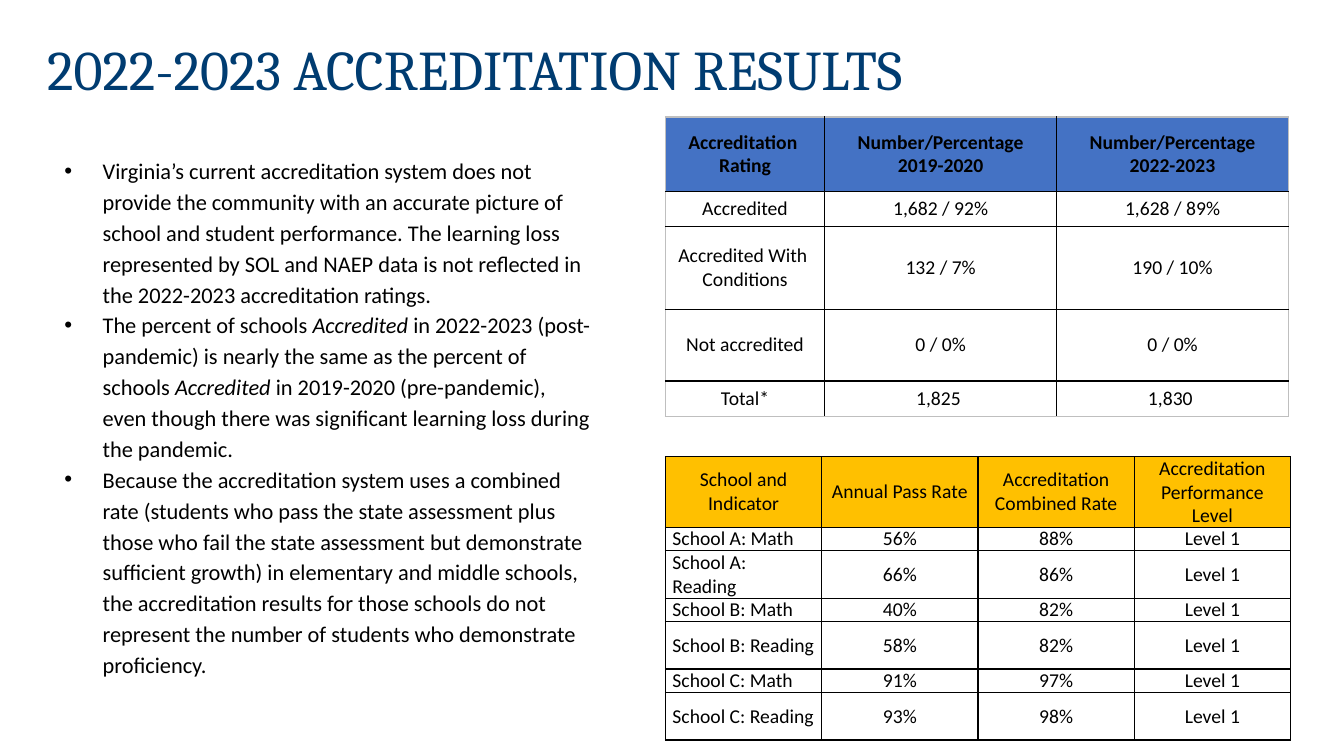
import pptx
import pptx.util
import pptx.dml.color
import pptx.enum.text
import pptx.oxml.ns
from lxml import etree

Inches, Pt = pptx.util.Inches, pptx.util.Pt
ALIGN = pptx.enum.text.PP_ALIGN
ANCHOR = pptx.enum.text.MSO_ANCHOR

HUES = {"navy": "003C71", "black": "000000", "blue": "4472C4",
        "gold": "FFC000", "grey": "BFBFBF"}

POINTS = [
    ["Virginia’s current accreditation system does not provide the community "
     "with an accurate picture of school and student performance. The learning "
     "loss represented by SOL and NAEP data is not reflected in the 2022-2023 "
     "accreditation ratings."],
    ["The percent of schools ", "Accredited",
     " in 2022-2023 (post-pandemic) is nearly the same as the percent of schools ",
     "Accredited",
     " in 2019-2020 (pre-pandemic), even though there was significant learning "
     "loss during the pandemic."],
    ["Because the accreditation system uses a combined rate (students who pass "
     "the state assessment plus those who fail the state assessment but "
     "demonstrate sufficient growth) in elementary and middle schools, the "
     "accreditation results for those schools do not represent the number of "
     "students who demonstrate proficiency."],
]

RATINGS = [
    ["Accreditation \nRating", "Number/Percentage\v2019-2020",
     " Number/Percentage \v2022-2023"],
    ["Accredited", "1,682 / 92%", "1,628 / 89%"],
    ["Accredited With \nConditions", "132 / 7%", "190 / 10%"],
    ["Not accredited", "0 / 0%", "0 / 0%"],
    ["Total*", "1,825 ", "1,830 "],
]

SCHOOLS = [
    ["School and Indicator", "Annual Pass Rate", "Accreditation Combined Rate",
     "Accreditation Performance Level"],
    ["School A: Math", "56%", "88%", "Level 1"],
    ["School A: Reading", "66%", "86%", "Level 1"],
    ["School B: Math", "40%", "82%", "Level 1"],
    ["School B: Reading", "58%", "82%", "Level 1"],
    ["School C: Math", "91%", "97%", "Level 1"],
    ["School C: Reading", "93%", "98%", "Level 1"],
]


def color(name):
    return pptx.dml.color.RGBColor.from_string(HUES[name])


def add_sub(node, tag, **attrs):
    return etree.SubElement(node, pptx.oxml.ns.qn(tag), attrs)


def style(font, hue="black", **looks):
    font.color.rgb = color(hue)
    for key, value in looks.items():
        setattr(font, key, value)


def add_box(slide, left, top, width, height, **looks):
    box = slide.shapes.add_textbox(*map(Inches, (left, top, width, height)))
    frame = box.text_frame
    for key, value in {"word_wrap": True, **looks}.items():
        setattr(frame, key, value)
    return frame


def add_title(slide, text):
    frame = add_box(slide, 0.37, 0.17, 12.87, 0.9, vertical_anchor=ANCHOR.BOTTOM)
    para = frame.paragraphs[0]
    para.line_spacing = 0.9
    run = para.add_run()
    run.text = text
    style(run.font, "navy", name="Cambria", size=Pt(40))


def add_bullets(slide, points):
    """Every second run of a point is set in italics."""
    frame = add_box(slide, 0.54, 1.47, 5.44, 5.35,
                    auto_size=pptx.enum.text.MSO_AUTO_SIZE.SHAPE_TO_FIT_TEXT)
    for num, parts in enumerate(points):
        para = frame.add_paragraph() if num else frame.paragraphs[0]
        para.line_spacing = 1.15
        props = para._p.get_or_add_pPr()
        props.set("marL", str(Inches(0.38)))
        props.set("indent", str(-Inches(0.38)))
        add_sub(add_sub(props, "a:buClr"), "a:srgbClr", val=HUES["black"])
        add_sub(props, "a:buFont", typeface="Arial")
        add_sub(props, "a:buChar", char="•")
        for spot, text in enumerate(parts):
            run = para.add_run()
            run.text = text
            style(run.font, name="Calibri", size=Pt(16), italic=spot % 2 == 1)


def add_edges(cell, hues):
    """Draw the left, right, top and bottom borders in the given colours."""
    props = cell._tc.get_or_add_tcPr()
    for side, hue in zip("LRTB", hues):
        line = add_sub(props, f"a:ln{side}", w=str(Pt(1)))
        add_sub(add_sub(line, "a:solidFill"), "a:srgbClr", val=HUES[hue])


def add_grid(slide, top, rows, widths, heights, head, rim="black",
             bold=False, inset=0, first=ALIGN.CENTER):
    """Add a table; rim colours its outside, first aligns body labels."""
    frame = slide.shapes.add_table(len(rows), len(widths), Inches(6.6), Inches(top),
                                   Inches(sum(widths)), Inches(sum(heights)))
    table = frame.table
    table.first_row = table.horz_banding = False
    for col, width in zip(table.columns, widths):
        col.width = Inches(width)
    for row, height in zip(table.rows, heights):
        row.height = Inches(height)
    looks = {"vertical_anchor": ANCHOR.MIDDLE, "margin_top": 0, "margin_bottom": 0,
             "margin_left": Inches(inset), "margin_right": Inches(inset)}
    for i, row in enumerate(rows):
        for j, text in enumerate(row):
            cell = table.cell(i, j)
            cell.text = text
            for key, value in looks.items():
                setattr(cell, key, value)
            outer = (j == 0, j == len(row) - 1, i == 0, i == len(rows) - 1)
            add_edges(cell, [rim if out else "black" for out in outer])
            if i == 0:
                cell.fill.solid()
                cell.fill.fore_color.rgb = color(head)
            else:
                cell.fill.background()
            for para in cell.text_frame.paragraphs:
                para.alignment = first if i and j == 0 else ALIGN.CENTER
                for run in para.runs:
                    style(run.font, name="Calibri", size=Pt(14), bold=bold and i == 0)


def main():
    deck = pptx.Presentation()
    deck.slide_width, deck.slide_height = Inches(13.33), Inches(7.5)
    slide = deck.slides.add_slide(deck.slide_layouts[6])
    add_title(slide, "2022-2023 ACCREDITATION RESULTS")
    add_grid(slide, 1.16, RATINGS, [1.58, 2.3, 2.3], [0.74, 0.35, 0.82, 0.71, 0.35],
             "blue", rim="grey", bold=True)
    add_bullets(slide, POINTS)
    add_grid(slide, 4.53, SCHOOLS, [1.55] * 4, [0.7] + [0.23, 0.47] * 3,
             "gold", inset=0.07, first=ALIGN.LEFT)
    deck.save("out.pptx")


if __name__ == "__main__":
    main()
